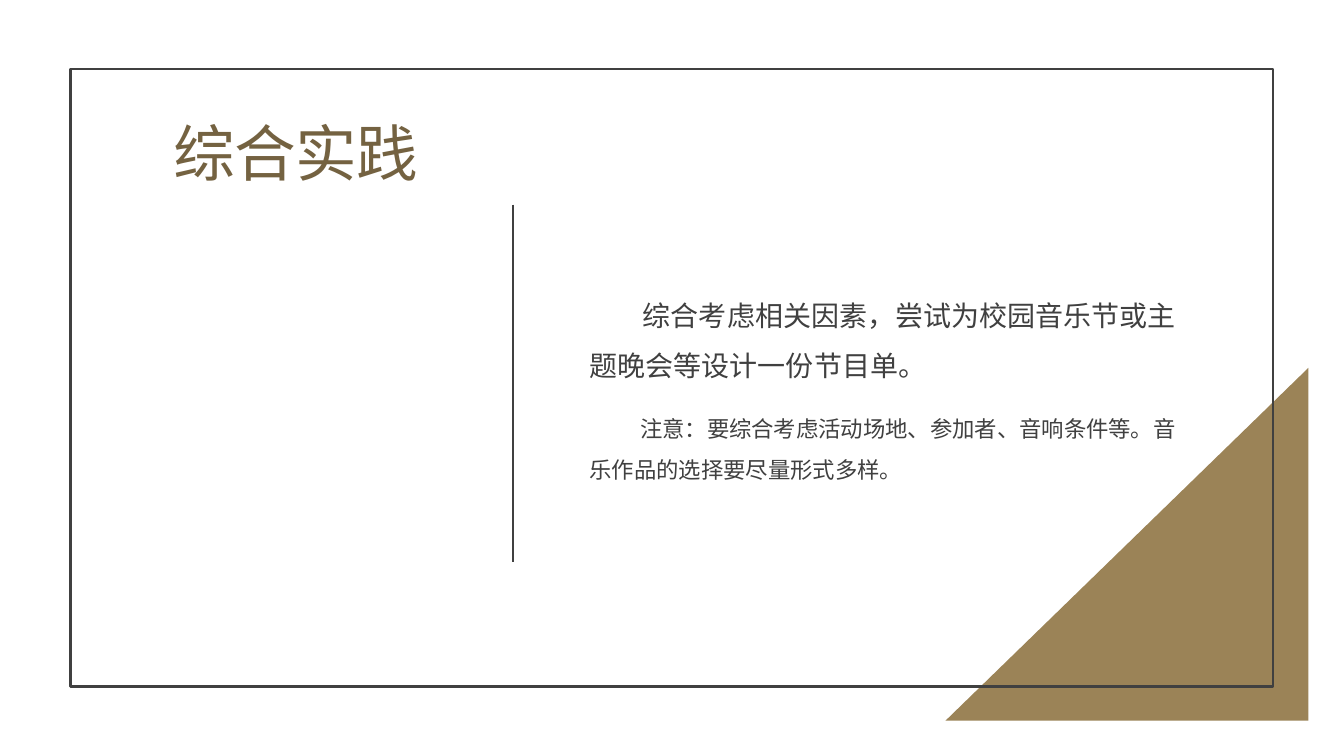
from dataclasses import dataclass

from lxml.etree import SubElement
from pptx import Presentation
from pptx.dml.color import RGBColor
from pptx.enum.shapes import MSO_CONNECTOR, MSO_SHAPE
from pptx.enum.text import MSO_ANCHOR, MSO_AUTO_SIZE, PP_ALIGN
from pptx.oxml.ns import qn
from pptx.util import Pt


@dataclass(frozen=True)
class Theme:
    ink: RGBColor = RGBColor(0x40, 0x40, 0x40)
    gold: RGBColor = RGBColor(0x9B, 0x83, 0x57)
    bronze: RGBColor = RGBColor(0x74, 0x62, 0x41)
    title_font: str = "Calibri"
    body_font: str = "Arial"
    title_size: int = 44
    task_size: int = 20
    note_size: int = 16
    line_width: float = 1.5


@dataclass(frozen=True)
class Box:
    left: float
    top: float
    width: float
    height: float

    def lengths(self):
        return [Pt(n) for n in (self.left, self.top, self.width, self.height)]


THEME = Theme()


def write(para, text, *, size, font, color, align=PP_ALIGN.LEFT, line=1.0,
          before=0, after=0, margin=0, indent=0, tracking=0):
    """Fill a paragraph with one formatted, unbulleted span."""
    para.alignment = align
    para.line_spacing = line
    para.space_before, para.space_after = Pt(before), Pt(after)
    properties = para._p.get_or_add_pPr()
    properties.set("marL", str(Pt(margin)))
    properties.set("indent", str(Pt(indent)))
    SubElement(properties, qn("a:buNone"))
    span = para.add_run()
    span.text = text
    span.font.size, span.font.name = Pt(size), font
    span.font.color.rgb = color
    if tracking:
        span._r.get_or_add_rPr().set("spc", str(round(tracking * 100)))


def place(placeholder, box, anchor, side_inset):
    """Move a placeholder into the box and return its text frame."""
    (placeholder.left, placeholder.top,
     placeholder.width, placeholder.height) = box.lengths()
    frame = placeholder.text_frame
    frame.word_wrap = True
    frame.auto_size = MSO_AUTO_SIZE.NONE
    frame.vertical_anchor = anchor
    frame.margin_left = frame.margin_right = Pt(side_inset)
    frame.margin_top = frame.margin_bottom = Pt(3.6)
    return frame


def add_corner(page, box):
    corner = page.shapes.add_shape(MSO_SHAPE.RIGHT_TRIANGLE, *box.lengths())
    corner._element.spPr.xfrm.set("flipH", "1")
    corner.shadow.inherit = False
    corner.fill.solid()
    corner.fill.fore_color.rgb = THEME.gold
    corner.line.fill.background()


def add_border(page, box):
    border = page.shapes.add_shape(MSO_SHAPE.RECTANGLE, *box.lengths())
    border.shadow.inherit = False
    border.fill.background()
    border.line.color.rgb = THEME.ink
    border.line.width = Pt(THEME.line_width)


def add_divider(page, box):
    """Draw a vertical rule down the left edge of the box."""
    left, top, _, height = box.lengths()
    divider = page.shapes.add_connector(
        MSO_CONNECTOR.STRAIGHT, left, top, left, top + height)
    divider.line.color.rgb = THEME.ink
    divider.line.width = Pt(THEME.line_width)
    SubElement(divider._element.spPr, qn("a:effectLst"))


def fill_title(page, box, text):
    frame = place(page.shapes.title, box, MSO_ANCHOR.BOTTOM, 7.2)
    write(frame.paragraphs[0], text, size=THEME.title_size,
          font=THEME.title_font, color=THEME.bronze,
          align=PP_ALIGN.RIGHT, line=0.85, tracking=-0.5)


def fill_body(page, box, task, note):
    frame = place(page.placeholders[1], box, MSO_ANCHOR.MIDDLE, 0)
    rows = ((task, THEME.task_size, 38), (note, THEME.note_size, 36))
    for number, (text, size, indent) in enumerate(rows):
        para = frame.add_paragraph() if number else frame.paragraphs[0]
        write(para, text, size=size, font=THEME.body_font, color=THEME.ink,
              line=1.5, before=12, after=2, margin=7.2, indent=indent)


def build_practice_page(deck, box):
    """Add the practice slide, laid out inside the given page box."""
    page = deck.slides.add_slide(deck.slide_layouts[1])

    def inside(left, top, width, height):
        return Box(box.left + left, box.top + top, width, height)

    add_corner(page, inside(675.4, 262.8, 259.2, 252))
    add_border(page, inside(50.4, 49, 859, 441.4))
    fill_title(page, inside(58.3, -8.6, 247.7, 147.6), "综合实践")
    add_divider(page, inside(366.5, 146.2, 0, 254.9))
    fill_body(page, inside(414, 133, 435.6, 280),
              "综合考虑相关因素，尝试为校园音乐节或主题晚会等设计一份节目单。",
              "注意：要综合考虑活动场地、参加者、音响条件等。音乐作品的选择要尽量形式多样。")


def main():
    deck = Presentation()
    deck.slide_width, deck.slide_height = Pt(960), Pt(540)
    build_practice_page(deck, Box(0, 0, 960, 540))
    deck.save("out.pptx")


if __name__ == "__main__":
    main()
